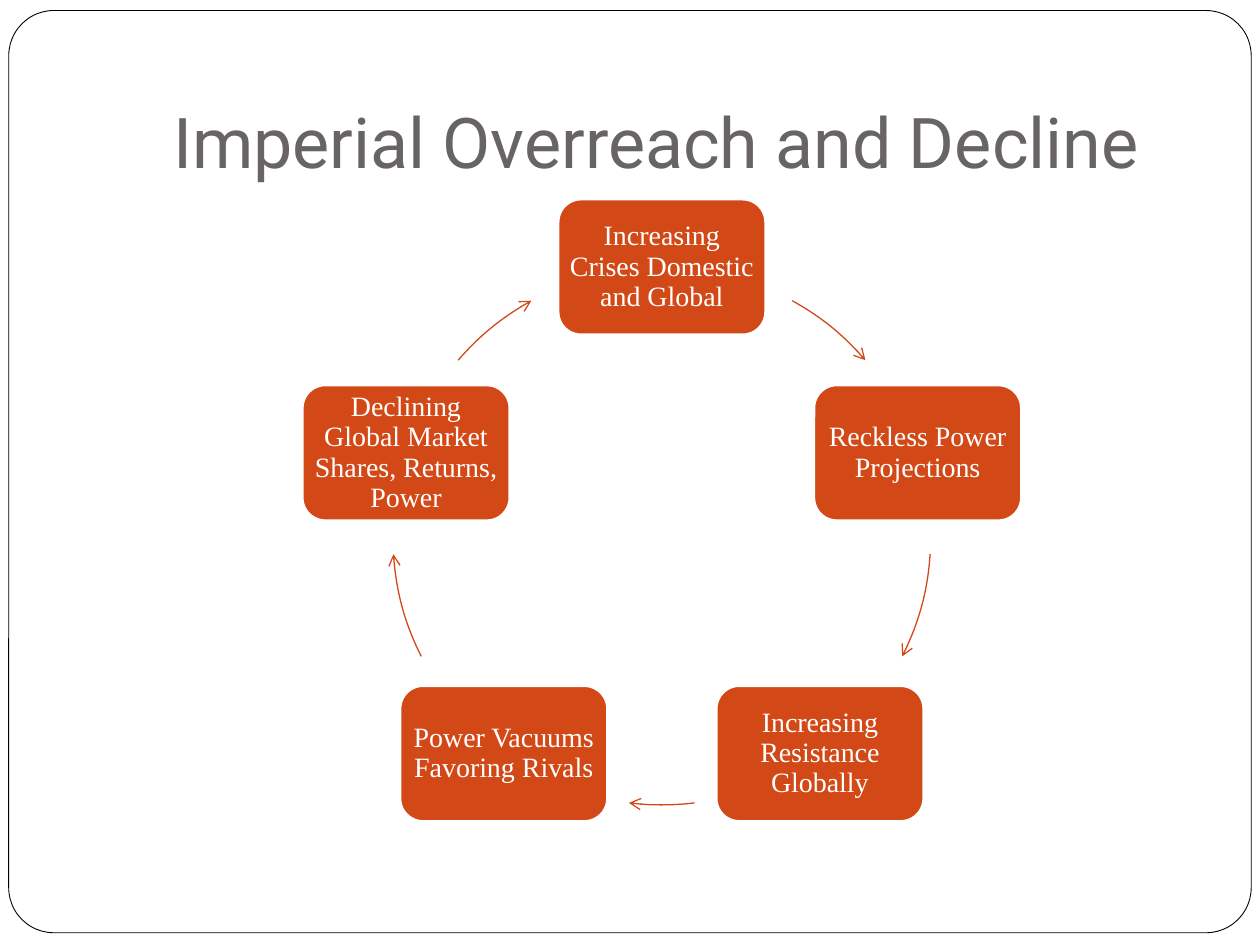
"""Build the slide on the cycle of imperial overreach and decline."""
import math
from dataclasses import dataclass

import lxml.etree
import pptx
import pptx.dml.color
import pptx.enum.shapes
import pptx.enum.text
import pptx.oxml.ns
import pptx.util

Pt = pptx.util.Pt
Preset = pptx.enum.shapes.MSO_SHAPE
Anchor = pptx.enum.text.MSO_ANCHOR
Align = pptx.enum.text.PP_ALIGN


@dataclass(frozen=True)
class Theme:
    """Colours, fonts and type sizes of the slide."""
    paper: str = "FFFFFF"
    border: str = "000000"
    heading: str = "696464"
    accent: str = "D34817"
    heading_font: str = "Roboto"
    body_font: str = "Times New Roman"
    heading_size: int = 40
    body_size: int = 16


THEME = Theme()
CENTRE_X, CENTRE_Y, RADIUS = 378.2, 306.3, 153.7
STAGE_WIDTH, STAGE_HEIGHT = 118, 77
STAGES = [
    "Increasing Crises Domestic and Global",
    "Reckless Power Projections",
    "Increasing Resistance Globally",
    "Power Vacuums Favoring Rivals",
    "Declining Global Market Shares, Returns, Power",
]
ARROW_SPANS = [(299, 319.2), (3.9, 26.6), (83, 97), (153.4, 176.1), (220.8, 241)]


def rgb(code):
    """Turn a hex code into a colour."""
    return pptx.dml.color.RGBColor.from_string(code)


def style_text(paragraph, font_name, size, colour, alignment):
    """Set the font and alignment of a paragraph."""
    paragraph.alignment = alignment
    paragraph.font.name = font_name
    paragraph.font.size = Pt(size)
    paragraph.font.color.rgb = rgb(colour)


def set_margins(frame, left, top, right, bottom):
    """Set the four insets of a text frame."""
    frame.margin_left, frame.margin_top = Pt(left), Pt(top)
    frame.margin_right, frame.margin_bottom = Pt(right), Pt(bottom)


def add_outlined(slide, preset, box, line_colour, line_width, fill=None):
    """Add a preset shape without shadow, filled only if a colour is given."""
    shape = slide.shapes.add_shape(preset, *map(Pt, box))
    shape.shadow.inherit = False
    if fill:
        shape.fill.solid()
        shape.fill.fore_color.rgb = rgb(fill)
    else:
        shape.fill.background()
    shape.line.color.rgb = rgb(line_colour)
    shape.line.width = Pt(line_width)
    return shape


def add_border(slide):
    """Add the rounded border around the slide."""
    border = add_outlined(slide, Preset.ROUNDED_RECTANGLE, (5, 6, 710, 527),
                          THEME.border, 0.5, THEME.paper)
    border.adjustments[0] = 0.049


def place_title(slide, wording):
    """Fill, place and format the title, in front of the border."""
    title = slide.shapes.title
    title.element.getparent().append(title.element)
    title.left, title.top, title.width, title.height = map(Pt, (72, 21.6, 612, 90))
    frame = title.text_frame
    frame.text = wording
    frame.word_wrap = True
    frame.auto_size = pptx.enum.text.MSO_AUTO_SIZE.NONE
    frame.vertical_anchor = Anchor.BOTTOM
    set_margins(frame, 27, 3.6, 7.2, 7.2)
    style_text(frame.paragraphs[0], THEME.heading_font, THEME.heading_size,
               THEME.heading, Align.LEFT)


def add_stage(slide, wording, angle):
    """Add one stage box centred on the circle at an angle in degrees."""
    left = CENTRE_X + RADIUS * math.cos(math.radians(angle)) - STAGE_WIDTH / 2
    top = CENTRE_Y + RADIUS * math.sin(math.radians(angle)) - STAGE_HEIGHT / 2
    stage = add_outlined(slide, Preset.ROUNDED_RECTANGLE,
                         (left, top, STAGE_WIDTH, STAGE_HEIGHT),
                         THEME.paper, 1, THEME.accent)
    frame = stage.text_frame
    frame.text = wording
    frame.word_wrap = True
    frame.vertical_anchor = Anchor.MIDDLE
    set_margins(frame, 1.3, 1.3, 1.3, 1.3)
    paragraph = frame.paragraphs[0]
    paragraph.line_spacing = 0.9
    style_text(paragraph, THEME.body_font, THEME.body_size, THEME.paper, Align.CENTER)


def add_arrow(slide, start, end):
    """Add a clockwise arc arrow between two angles in degrees."""
    box = (CENTRE_X - RADIUS, CENTRE_Y - RADIUS, 2 * RADIUS, 2 * RADIUS)
    arrow = add_outlined(slide, Preset.ARC, box, THEME.accent, 0.75)
    for index, angle in enumerate((start, end)):
        arrow.adjustments[index] = angle * 0.6
    outline = arrow.element.spPr.find(pptx.oxml.ns.qn("a:ln"))
    lxml.etree.SubElement(outline, pptx.oxml.ns.qn("a:tailEnd"), type="arrow")


def main():
    """Build and save the slide."""
    deck = pptx.Presentation()
    deck.slide_width, deck.slide_height = Pt(720), Pt(540)
    slide = deck.slides.add_slide(deck.slide_layouts.get_by_name("Title Only"))
    add_border(slide)
    place_title(slide, "Imperial Overreach and Decline")
    for index, (wording, span) in enumerate(zip(STAGES, ARROW_SPANS)):
        add_stage(slide, wording, -90 + index * 360 / len(STAGES))
        add_arrow(slide, *span)
    deck.save("out.pptx")


if __name__ == "__main__":
    main()
